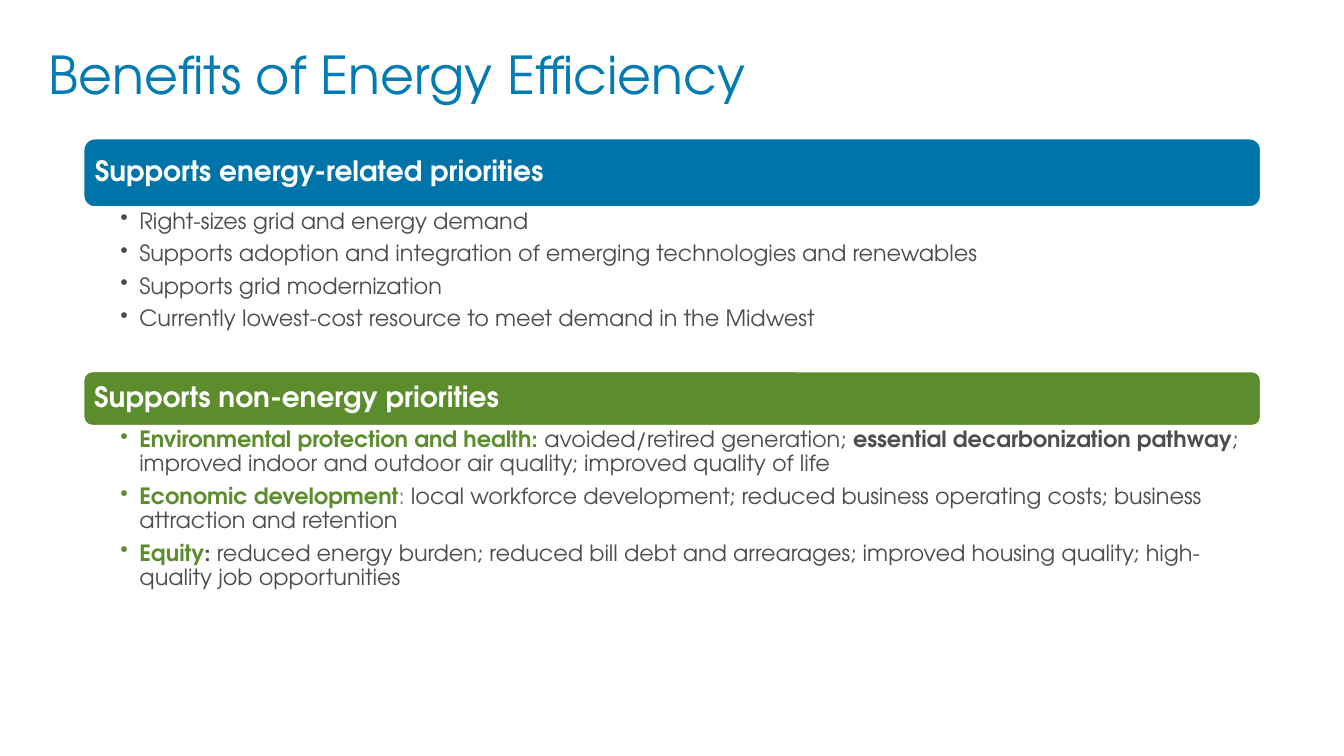
from lxml import etree
from pptx import Presentation
from pptx.dml.color import RGBColor
from pptx.enum.shapes import MSO_SHAPE
from pptx.enum.text import MSO_ANCHOR
from pptx.oxml.ns import qn
from pptx.util import Pt

ROUNDED = MSO_SHAPE.ROUNDED_RECTANGLE
MIDDLE = MSO_ANCHOR.MIDDLE
TOP = MSO_ANCHOR.TOP
FONT = "TeX Gyre Adventor"
COLORS = {
    "title": "007BB3",
    "blue": "0074A9",
    "green": "5B8D2D",
    "gray": "4D4D4D",
    "white": "FFFFFF",
}
BULLET_INDENT = 13.5

ENERGY_ITEMS = [
    [("Right-sizes grid and energy demand", "gray", False)],
    [("Supports adoption and integration of emerging technologies and renewables", "gray", False)],
    [("Supports grid modernization", "gray", False)],
    [("Currently lowest-cost resource to meet demand in the Midwest", "gray", False)],
]
NON_ENERGY_ITEMS = [
    [
        ("Environmental protection and health: ", "green", True),
        ("avoided/retired generation; ", "gray", False),
        ("essential decarbonization pathway", "gray", True),
        ("; improved indoor and outdoor air quality; improved quality of life", "gray", False),
    ],
    [
        ("Economic development", "green", True),
        (": ", "green", False),
        ("local workforce development; reduced business operating costs; "
         "business attraction and retention", "gray", False),
    ],
    [
        ("Equity", "green", True),
        (": ", "gray", True),
        ("reduced energy burden; reduced bill debt and arrearages; "
         "improved housing quality; high-quality job opportunities", "gray", False),
    ],
]


def set_frame(frame, anchor, left, top, right, bottom):
    frame.word_wrap = True
    frame.vertical_anchor = anchor
    frame.margin_left, frame.margin_top = Pt(left), Pt(top)
    frame.margin_right, frame.margin_bottom = Pt(right), Pt(bottom)


def add_span(para, text, size, color, bold=False):
    span = para.add_run()
    span.text = text
    span.font.name = FONT
    span.font.size = Pt(size)
    span.font.bold = bold
    span.font.color.rgb = RGBColor.from_string(COLORS[color])


def add_bullet(para):
    properties = para._p.get_or_add_pPr()
    properties.set("marL", str(Pt(BULLET_INDENT)))
    properties.set("indent", str(-Pt(BULLET_INDENT)))
    etree.SubElement(properties, qn("a:buChar")).set("char", "•")


def add_title(page, left, top, width, height):
    box = page.shapes.add_textbox(Pt(left), Pt(top), Pt(width), Pt(height))
    set_frame(box.text_frame, MIDDLE, 7.2, 3.6, 7.2, 3.6)
    add_span(box.text_frame.paragraphs[0], "Benefits of Energy Efficiency", 37.3, "title")


def add_bar(page, left, top, width, height, heading, color):
    bar = page.shapes.add_shape(ROUNDED, Pt(left), Pt(top), Pt(width), Pt(height))
    bar.shadow.inherit = False
    bar.fill.solid()
    bar.fill.fore_color.rgb = RGBColor.from_string(COLORS[color])
    bar.line.color.rgb = RGBColor.from_string(COLORS["white"])
    bar.line.width = Pt(2)
    set_frame(bar.text_frame, MIDDLE, 6, 6, 6, 6)
    para = bar.text_frame.paragraphs[0]
    para.alignment = 1
    para.line_spacing = 0.9
    add_span(para, heading, 20, "white", True)


def add_items(page, left, top, width, height, items):
    box = page.shapes.add_textbox(Pt(left), Pt(top), Pt(width), Pt(height))
    frame = box.text_frame
    set_frame(frame, TOP, 26.7, 1.5, 8.5, 1.5)
    for index, item in enumerate(items):
        para = frame.paragraphs[0] if index == 0 else frame.add_paragraph()
        para.line_spacing = 0.9
        para.space_after = Pt(6)
        add_bullet(para)
        for text, color, bold in item:
            add_span(para, text, 16, color, bold)


def add_section(page, left, top, width, bar_height, items_height, heading, color, items):
    add_bar(page, left, top, width, bar_height, heading, color)
    add_items(page, left, top + bar_height, width, items_height, items)


def main():
    deck = Presentation()
    deck.slide_width, deck.slide_height = Pt(960), Pt(540)
    page = deck.slides.add_slide(deck.slide_layouts[6])
    add_title(page, 27.4, 29.5, 884.9, 46.1)
    add_section(page, 59.3, 98.6, 841.7, 49.7, 116.6,
                "Supports energy-related priorities", "blue", ENERGY_ITEMS)
    add_section(page, 59.3, 264.9, 841.7, 39.6, 121.7,
                "Supports non-energy priorities", "green", NON_ENERGY_ITEMS)
    deck.save("out.pptx")


if __name__ == "__main__":
    main()
